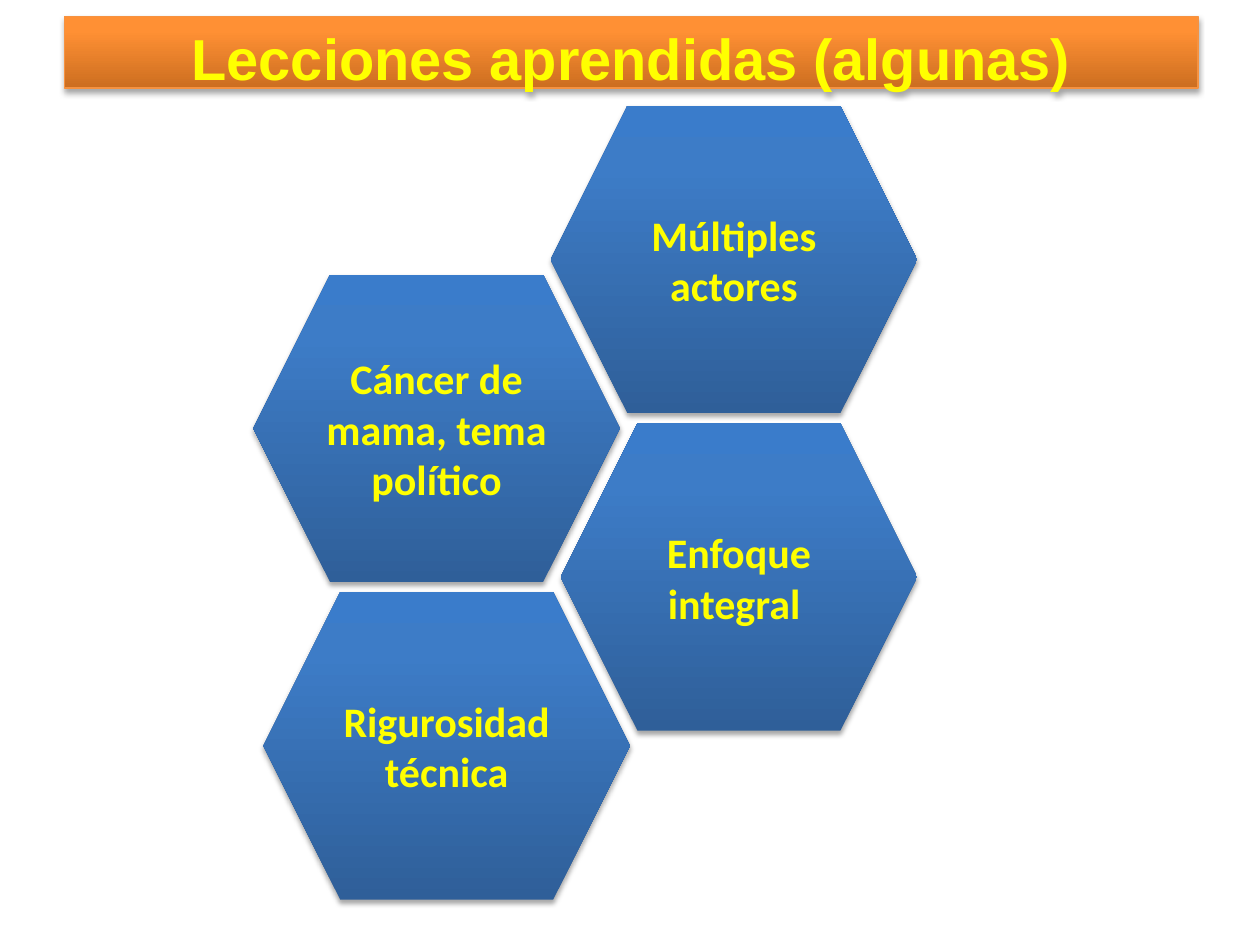
import pptx
import pptx.util
import pptx.dml.color
import pptx.enum.shapes
import pptx.enum.text
import pptx.oxml
import pptx.oxml.ns

Inches, Pt = pptx.util.Inches, pptx.util.Pt
SHAPE = pptx.enum.shapes.MSO_SHAPE
ANCHOR = pptx.enum.text.MSO_ANCHOR

# Content: lessons as (text, column, row, width)
TITLE = "Lecciones aprendidas (algunas)"
LESSONS = [
    ("Múltiples actores", 1, 0, 2.91),
    ("Cáncer de mama, tema político", 0, 0, 2.91),
    ("Enfoque integral ", 1, 1, 2.83),
    ("Rigurosidad técnica", 0, 1, 2.91),
]

THEME = {
    "text": "FFFF00",
    "title": ("Arial", 33),
    "lesson": ("Calibri", 24),
    "orange": [(0, "CC6E20"), (80, "FF9034"), (100, "FF9136")],
    "blue": [(0, "2F5F99"), (80, "3D7CC7"), (100, "3A7CCB")],
    "title_line": "F69240",
    "shadow": "000000",
}

# Honeycomb grid, in inches
LEFT, TOP = 2.01, 0.84
COLUMN_STEP, ROW_STEP = 2.36, 2.52
LEFT_COLUMN_DROP, ROW_SHIFT = 1.34, 0.08
HEX_HEIGHT = 2.44


def rgb(value):
    return pptx.dml.color.RGBColor.from_string(value)


def xml(markup):
    return pptx.oxml.parse_xml(
        markup.replace(">", f" {pptx.oxml.ns.nsdecls('a')}>", 1))


def set_gradient(shape, stops):
    """Blend the stops from the bottom edge to the top edge."""
    shape.fill.gradient()
    shape.fill.gradient_angle = 90
    stop_list = shape.fill._fill._gradFill.find(pptx.oxml.ns.qn("a:gsLst"))
    items = "".join(f'<a:gs pos="{pos * 1000}"><a:srgbClr val="{color}"/></a:gs>'
                    for pos, color in stops)
    stop_list.getparent().replace(stop_list, xml(f"<a:gsLst>{items}</a:gsLst>"))


def set_shadow(shape):
    shape.shadow.inherit = False
    effects = shape._element.spPr.find(pptx.oxml.ns.qn("a:effectLst"))
    effects.append(xml(
        f'<a:outerShdw blurRad="{Pt(3.1)}" dist="{Pt(1.8)}" dir="5400000" '
        f'rotWithShape="0"><a:srgbClr val="{THEME["shadow"]}">'
        '<a:alpha val="35000"/></a:srgbClr></a:outerShdw>'))


def add_block(slide, kind, box, text, style, stops, anchor):
    block = slide.shapes.add_shape(kind, *map(Inches, box))
    set_gradient(block, stops)
    block.line.fill.background()
    set_shadow(block)
    frame = block.text_frame
    frame.word_wrap = True
    frame.vertical_anchor = anchor
    frame.text = text
    paragraph = frame.paragraphs[0]
    paragraph.alignment = pptx.enum.text.PP_ALIGN.CENTER
    font = paragraph.font
    font.name, font.size, font.bold = style[0], Pt(style[1]), True
    font.color.rgb = rgb(THEME["text"])
    return block


def main():
    deck = pptx.Presentation()
    deck.slide_width, deck.slide_height = Inches(10), Inches(7.5)
    slide = deck.slides.add_slide(deck.slide_layouts[6])

    # Title bar
    banner = add_block(slide, SHAPE.RECTANGLE, (0.51, 0.13, 9, 0.57), TITLE,
                       THEME["title"], THEME["orange"], ANCHOR.TOP)
    banner.line.color.rgb = rgb(THEME["title_line"])
    banner.line.width = Pt(0.75)

    # Lessons: each column shares its right edge rule, narrower cells start later
    for text, column, row, width in LESSONS:
        left = LEFT + column * COLUMN_STEP + row * ROW_SHIFT
        top = TOP + row * ROW_STEP + (1 - column) * LEFT_COLUMN_DROP
        hexagon = add_block(slide, SHAPE.HEXAGON, (left, top, width, HEX_HEIGHT),
                            text, THEME["lesson"], THEME["blue"], ANCHOR.MIDDLE)
        hexagon.adjustments[0] = 0.25

    deck.save("out.pptx")


if __name__ == "__main__":
    main()
